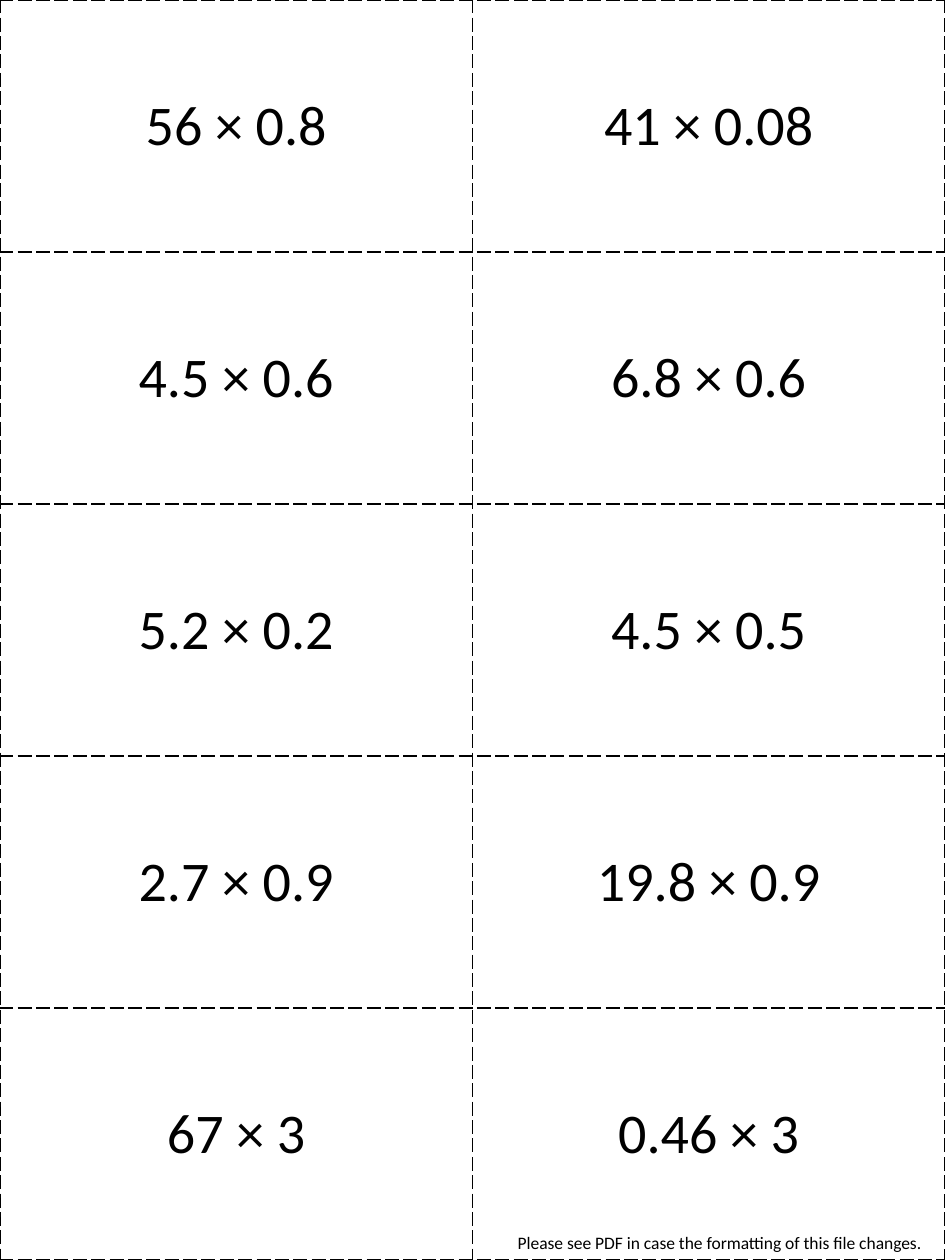
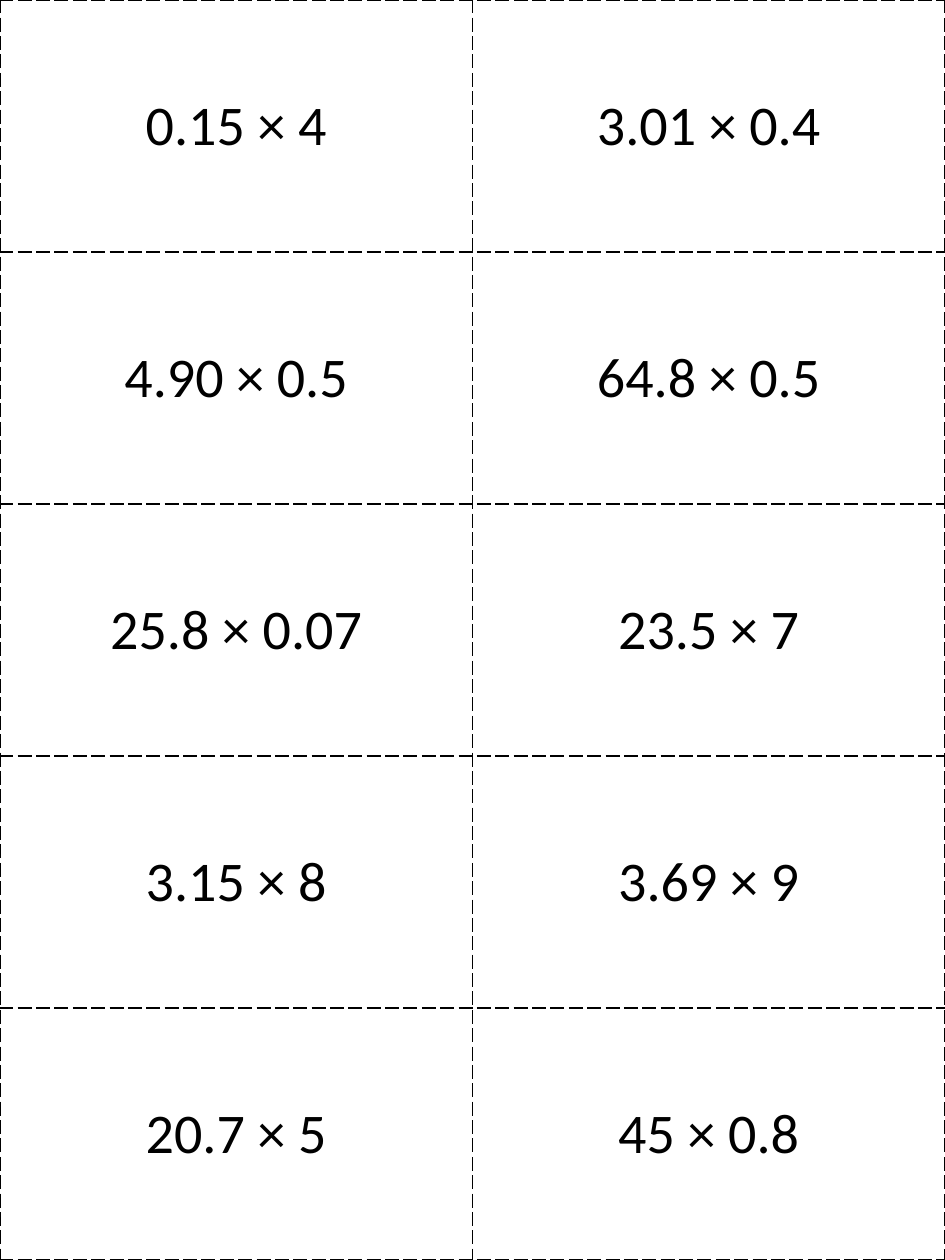
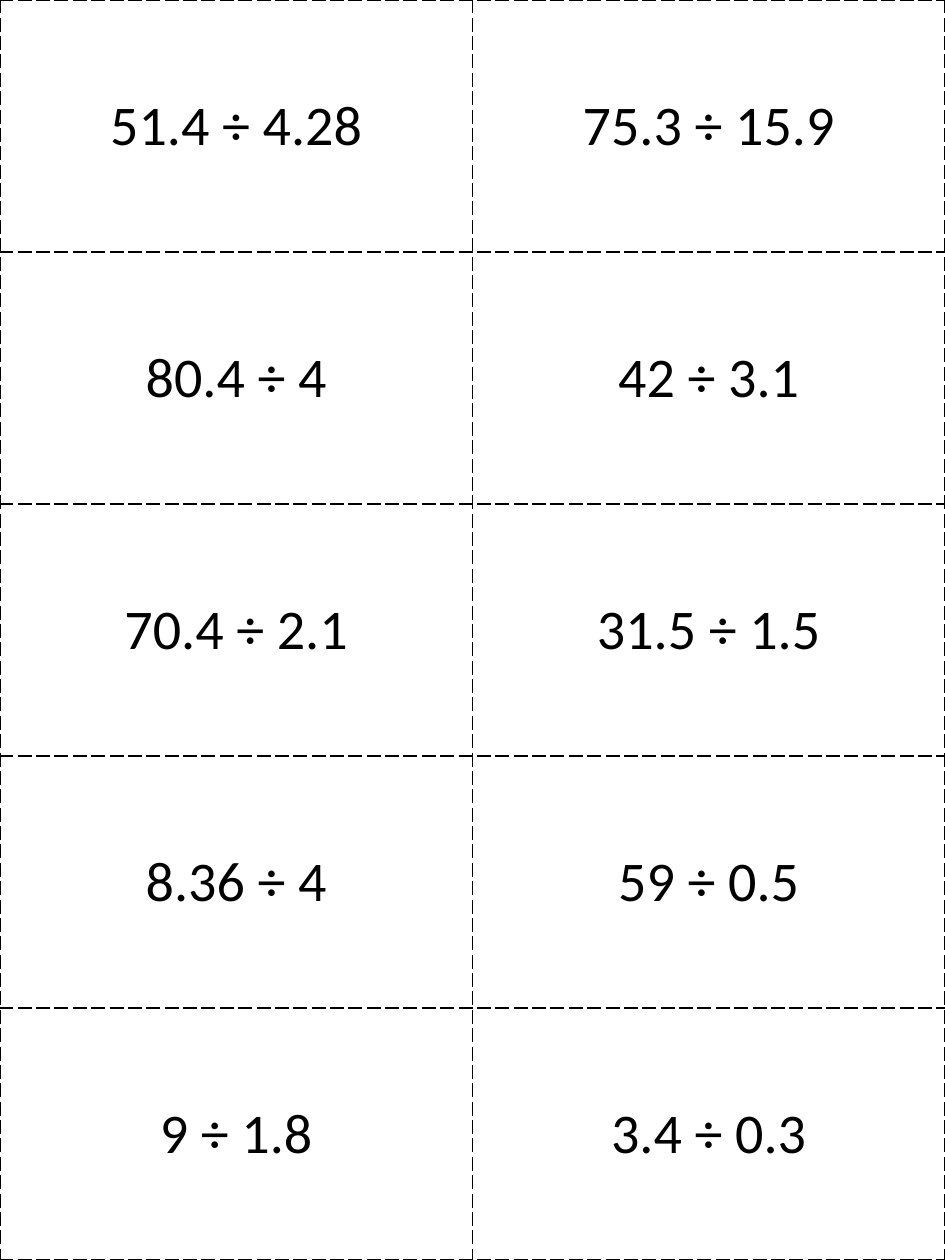
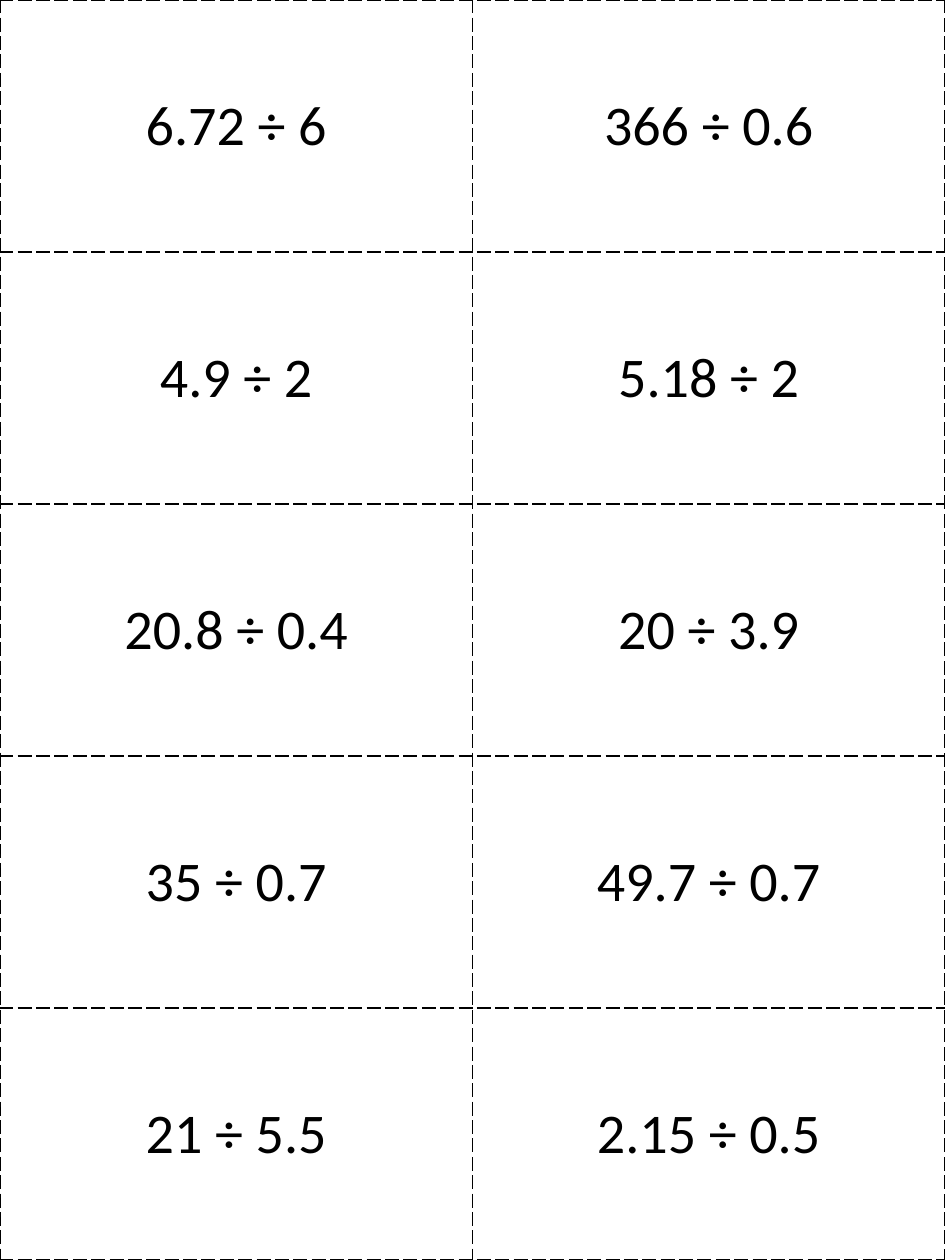
from dataclasses import dataclass

from lxml import etree
from pptx import Presentation
from pptx.dml.color import RGBColor
from pptx.enum.text import MSO_ANCHOR, MSO_AUTO_SIZE, PP_ALIGN
from pptx.oxml.ns import qn
from pptx.util import Inches, Pt

MIDDLE = MSO_ANCHOR.MIDDLE
CENTER = PP_ALIGN.CENTER
LEFT = PP_ALIGN.LEFT
GROW = MSO_AUTO_SIZE.SHAPE_TO_FIT_TEXT


@dataclass(frozen=True)
class Theme:
    font: str = "Calibri"
    ink: str = "000000"
    problem_size: int = 32
    note_size: int = 10
    border_width: int = 1
    border_dash: str = "lgDash"


THEME = Theme()
PAGE_WIDTH, PAGE_HEIGHT = 7.5, 10
COLUMNS = 2

# Problems on each page, row by row
PAGES = [
    ["56 × 0.8", "41 × 0.08", "4.5 × 0.6", "6.8 × 0.6", "5.2 × 0.2",
     "4.5 × 0.5", "2.7 × 0.9", "19.8 × 0.9", "67 × 3", "0.46 × 3"],
    ["0.15 × 4", "3.01 × 0.4", "4.90 × 0.5", "64.8 × 0.5", "25.8 × 0.07",
     "23.5 × 7", "3.15 × 8", "3.69 × 9", "20.7 × 5", "45 × 0.8"],
    ["51.4 ÷ 4.28", "75.3 ÷ 15.9", "80.4 ÷ 4", "42 ÷ 3.1", "70.4 ÷ 2.1",
     "31.5 ÷ 1.5", "8.36 ÷ 4", "59 ÷ 0.5", "9 ÷ 1.8", "3.4 ÷ 0.3"],
    ["6.72 ÷ 6", "366 ÷ 0.6", "4.9 ÷ 2", "5.18 ÷ 2", "20.8 ÷ 0.4",
     "20 ÷ 3.9", "35 ÷ 0.7", "49.7 ÷ 0.7", "21 ÷ 5.5", "2.15 ÷ 0.5"],
]
NOTE = "Please see PDF in case the formatting of this file changes."


def write_text(frame, text, size, alignment):
    para = frame.paragraphs[0]
    para.text = text
    para.alignment = alignment
    para.font.name = THEME.font
    para.font.size = Pt(size)
    para.font.color.rgb = RGBColor.from_string(THEME.ink)


def add_cut_lines(cell):
    properties = cell._tc.get_or_add_tcPr()
    for side in ("lnL", "lnR", "lnT", "lnB"):
        line = etree.SubElement(properties, qn(f"a:{side}"),
                                w=str(Pt(THEME.border_width)))
        fill = etree.SubElement(line, qn("a:solidFill"))
        etree.SubElement(fill, qn("a:srgbClr"), val=THEME.ink)
        etree.SubElement(line, qn("a:prstDash"), val=THEME.border_dash)


deck = Presentation()
deck.slide_width = Inches(PAGE_WIDTH)
deck.slide_height = Inches(PAGE_HEIGHT)
blank_layout = deck.slide_layouts[6]

# One table of cut-out cards per page
for problems in PAGES:
    page = deck.slides.add_slide(blank_layout)
    rows = len(problems) // COLUMNS
    cards = page.shapes.add_table(rows, COLUMNS, 0, 0, deck.slide_width,
                                  deck.slide_height).table
    cards.first_row = False
    cards.horz_banding = False
    for cell, problem in zip(cards.iter_cells(), problems):
        write_text(cell.text_frame, problem, THEME.problem_size, CENTER)
        cell.vertical_anchor = MIDDLE
        add_cut_lines(cell)
        cell.fill.background()

# Note at the foot of the first page
box = deck.slides[0].shapes.add_textbox(Inches(4.01), Inches(9.73),
                                        Inches(3.49), Inches(0.27))
box.text_frame.word_wrap = False
box.text_frame.auto_size = GROW
write_text(box.text_frame, NOTE, THEME.note_size, LEFT)

deck.save("out.pptx")
